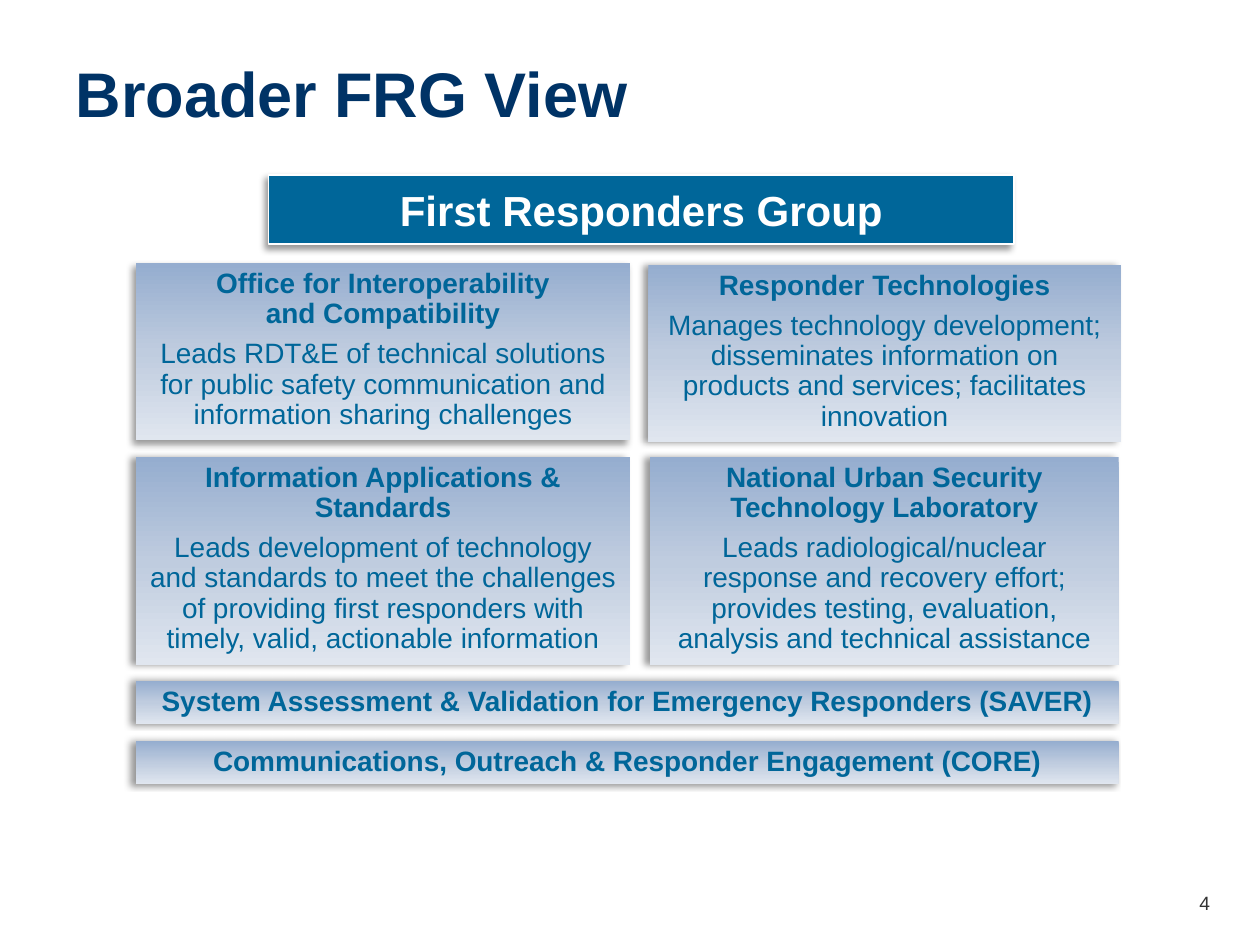
"""Builds the Broader FRG View slide with its group, four divisions and two programs."""
import copy
from lxml import etree
from pptx import Presentation
from pptx import util as u
from pptx.dml.color import RGBColor
from pptx.enum import shapes, text
from pptx.oxml.ns import qn

COLORS = {"navy": "003366", "teal": "006699", "white": "FFFFFF", "gray": "333333",
          "top": "95ADCF", "middle": "BFCCDF", "bottom": "E0E6EF", "shadow": "000000"}
FONT = "Arial"


def add_text(paragraph, wording, size, color, bold=False):
    for index, line in enumerate(wording.split("\n")):
        if index:
            paragraph.add_line_break()
        run = paragraph.add_run()
        run.text = line
        run.font.name, run.font.size, run.font.bold = FONT, u.Pt(size), bold
        run.font.color.rgb = RGBColor.from_string(COLORS[color])


def add_panel(left, top, width, height, shadow_angle):
    panel = slide.shapes.add_shape(shapes.MSO_SHAPE.RECTANGLE, u.Pt(left), u.Pt(top),
                                   u.Pt(width), u.Pt(height))
    panel.shadow.inherit = False
    effects = panel._element.spPr.find(qn("a:effectLst"))
    shadow = etree.SubElement(effects, qn("a:outerShdw"), blurRad=str(u.Pt(4)),
                              dist=str(u.Pt(3)), dir=str(shadow_angle * 60000),
                              algn="ctr", rotWithShape="0")
    tint = etree.SubElement(shadow, qn("a:srgbClr"), val=COLORS["shadow"])
    etree.SubElement(tint, qn("a:alpha"), val="40000")
    panel.text_frame.word_wrap = True
    panel.text_frame.paragraphs[0].alignment = text.PP_ALIGN.CENTER
    return panel


prs = Presentation()
prs.slide_width, prs.slide_height = u.Pt(720), u.Pt(540)
slide = prs.slides.add_slide(prs.slide_layouts[5])

title = slide.shapes.title
title.left, title.top, title.width, title.height = u.Pt(36), u.Pt(18), u.Pt(666), u.Pt(60)
title.text_frame.vertical_anchor = text.MSO_ANCHOR.BOTTOM
title.text_frame.paragraphs[0].alignment = text.PP_ALIGN.LEFT
add_text(title.text_frame.paragraphs[0], "Broader FRG View", 36, "navy", True)

group = add_panel(153.5, 100, 426, 39.5, 135)
group.fill.solid()
group.fill.fore_color.rgb = RGBColor.from_string(COLORS["teal"])
group.line.color.rgb = RGBColor.from_string(COLORS["white"])
group.line.width = u.Pt(0.75)
add_text(group.text_frame.paragraphs[0], "First Responders Group", 24, "white", True)

units = [
    (77.75, 150.5, 282.25, 101.25, 135, "Office for Interoperability\nand Compatibility",
     "Leads RDT&E of technical solutions for public safety communication and "
     "information sharing challenges"),
    (370.5, 151.5, 270, 101.25, 180, "Responder Technologies",
     "Manages technology development; disseminates information on products and "
     "services; facilitates innovation"),
    (77.75, 261.25, 282.25, 118.75, 180, "Information Applications & Standards",
     "Leads development of technology and standards to meet the challenges of "
     "providing first responders with timely, valid, actionable information"),
    (371.5, 261.25, 267.75, 118.75, 180, "National Urban Security\nTechnology Laboratory",
     "Leads radiological/nuclear response and recovery effort; provides testing, "
     "evaluation, analysis and technical assistance"),
    (77.75, 389, 561.5, 24.75, 180,
     "System Assessment & Validation for Emergency Responders (SAVER)", ""),
    (77.75, 423.5, 561.5, 24.75, 180,
     "Communications, Outreach & Responder Engagement (CORE)", ""),
]
for left, top, width, height, shadow_angle, name, mission in units:
    unit = add_panel(left, top, width, height, shadow_angle)
    unit.line.fill.background()
    unit.fill.gradient()
    unit.fill.gradient_angle = 270
    first_stop = unit.fill.gradient_stops[0]._gs
    first_stop.addnext(copy.deepcopy(first_stop))
    for stop, position, shade in zip(unit.fill.gradient_stops, (0, 0.5, 1),
                                     ("top", "middle", "bottom")):
        stop.position = position
        stop.color.rgb = RGBColor.from_string(COLORS[shade])

    frame = unit.text_frame
    frame.vertical_anchor = text.MSO_ANCHOR.TOP
    add_text(frame.paragraphs[0], name, 16, "teal", True)
    if mission:
        add_text(frame.add_paragraph(), mission, 16, "teal")
    for paragraph in frame.paragraphs:
        paragraph.alignment = text.PP_ALIGN.CENTER
        paragraph.line_spacing = 0.9
        paragraph.space_after = u.Pt(5.6)

page = slide.shapes.add_textbox(u.Pt(678.25), u.Pt(506), u.Pt(36), u.Pt(20.25))
page.text_frame.word_wrap = True
page.text_frame.vertical_anchor = text.MSO_ANCHOR.BOTTOM
add_text(page.text_frame.paragraphs[0], "4", 11, "gray")

prs.save("out.pptx")
